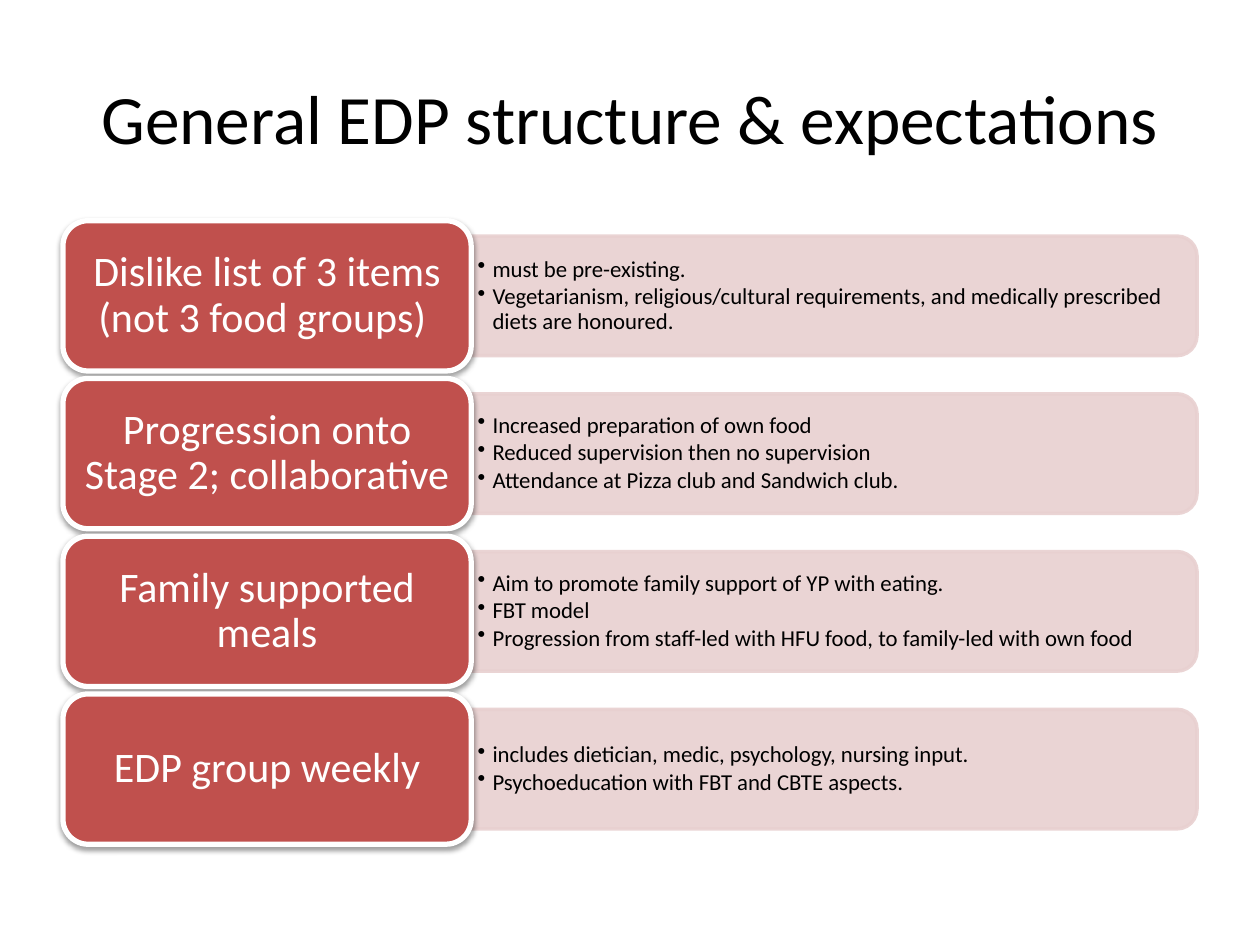
from dataclasses import dataclass

from lxml.etree import SubElement
from pptx import Presentation
from pptx.dml.color import RGBColor
from pptx.enum.shapes import MSO_SHAPE
from pptx.enum.text import MSO_ANCHOR, PP_ALIGN
from pptx.oxml.ns import qn
from pptx.util import Cm, Pt

COLOURS = {"black": "000000", "white": "FFFFFF", "red": "C0504D", "pink": "E8D0D0"}
FONT = "Calibri"

# Row geometry, in centimetres
TOP, PITCH = 4.45, 3.18
LABEL_LEFT, LABEL_WIDTH, LABEL_HEIGHT = 1.27, 8.23, 3.03
PANEL_LEFT, PANEL_WIDTH, PANEL_HEIGHT = LABEL_LEFT + LABEL_WIDTH, 14.63, 2.41
DETAIL_WIDTH, DETAIL_HEIGHT = 14.5, 2.18
BULLET_INDENT = 0.3


@dataclass
class Row:
    label: str
    details: list[str]


ROWS = [
    Row("Dislike list of 3 items (not 3 food groups) ", [
        "must be pre-existing.",
        "Vegetarianism, religious/cultural requirements, and medically prescribed "
        "diets are honoured.",
    ]),
    Row("Progression onto Stage 2; collaborative", [
        "Increased preparation of own food",
        "Reduced supervision then no supervision",
        "Attendance at Pizza club and Sandwich club.",
    ]),
    Row("Family supported meals", [
        "Aim to promote family support of YP with eating.",
        "FBT model",
        "Progression from staff-led with HFU food, to family-led with own food",
    ]),
    Row("EDP group weekly", [
        "includes dietician, medic, psychology, nursing input.",
        "Psychoeducation with FBT and CBTE aspects.",
    ]),
]


def colour(name: str) -> RGBColor:
    return RGBColor.from_string(COLOURS[name])


def write_text(shape, lines: list[str], *, size: float, color: str = "black",
               align=PP_ALIGN.LEFT, spacing: float = 1.0, after: float = 0,
               insets: tuple[float, float] = (0.25, 0.13), bullets: bool = False) -> None:
    """Fill a shape with one paragraph per line."""
    frame = shape.text_frame
    frame.word_wrap = True
    frame.vertical_anchor = MSO_ANCHOR.MIDDLE
    frame.margin_left = frame.margin_right = Cm(insets[0])
    frame.margin_top = frame.margin_bottom = Cm(insets[1])
    for index, line in enumerate(lines):
        paragraph = frame.paragraphs[0] if index == 0 else frame.add_paragraph()
        paragraph.alignment = align
        paragraph.line_spacing = spacing
        paragraph.space_after = Pt(after)
        run = paragraph.add_run()
        run.text = line
        run.font.name = FONT
        run.font.size = Pt(size)
        run.font.color.rgb = colour(color)
        if bullets:
            properties = paragraph._p.get_or_add_pPr()
            properties.set("marL", str(Cm(BULLET_INDENT)))
            properties.set("indent", str(-Cm(BULLET_INDENT)))
            SubElement(properties, qn("a:buChar"), char="•")


def add_box(slide, kind, left: float, top: float, width: float, height: float,
            *, fill: str, line: str, line_width: float):
    shape = slide.shapes.add_shape(kind, Cm(left), Cm(top), Cm(width), Cm(height))
    shape.shadow.inherit = False
    shape.fill.solid()
    shape.fill.fore_color.rgb = colour(fill)
    shape.line.color.rgb = colour(line)
    shape.line.width = Pt(line_width)
    return shape


def add_shadow(shape) -> None:
    """Drop a soft shadow straight down."""
    effects = shape._element.spPr.find(qn("a:effectLst"))
    shadow = SubElement(effects, qn("a:outerShdw"), blurRad=str(Pt(3.1)),
                        dist=str(Pt(1.6)), dir="5400000", rotWithShape="0")
    shade = SubElement(shadow, qn("a:srgbClr"), val=COLOURS["black"])
    SubElement(shade, qn("a:alpha"), val="38000")


def add_row(slide, row: Row, top: float) -> None:
    middle = top + LABEL_HEIGHT / 2

    # Panel: a shape with two rounded top corners, turned to face right
    panel = add_box(slide, MSO_SHAPE.ROUND_2_SAME_RECTANGLE,
                    PANEL_LEFT + (PANEL_WIDTH - PANEL_HEIGHT) / 2,
                    middle - PANEL_WIDTH / 2, PANEL_HEIGHT, PANEL_WIDTH,
                    fill="pink", line="pink", line_width=2)
    panel.rotation = 90
    for tint in panel._element.spPr.iter(qn("a:srgbClr")):
        SubElement(tint, qn("a:alpha"), val="90000")

    # Details, upright over the panel
    details = slide.shapes.add_textbox(Cm(PANEL_LEFT), Cm(middle - DETAIL_HEIGHT / 2),
                                       Cm(DETAIL_WIDTH), Cm(DETAIL_HEIGHT))
    write_text(details, row.details, size=13, spacing=0.9, after=1.7,
               insets=(0.13, 0.08), bullets=True)

    # Label
    label = add_box(slide, MSO_SHAPE.ROUNDED_RECTANGLE, LABEL_LEFT, top,
                    LABEL_WIDTH, LABEL_HEIGHT, fill="red", line="white", line_width=3)
    add_shadow(label)
    write_text(label, [row.label], size=24, color="white",
               align=PP_ALIGN.CENTER, spacing=0.9)


def main() -> None:
    presentation = Presentation()
    presentation.slide_width, presentation.slide_height = Cm(25.4), Cm(19.05)
    slide = presentation.slides.add_slide(presentation.slide_layouts[5])

    # Title
    title = slide.shapes.title
    title.left, title.top, title.width, title.height = Cm(1.27), Cm(0.76), Cm(22.86), Cm(3.18)
    write_text(title, ["General EDP structure & expectations"], size=39.6,
               align=PP_ALIGN.CENTER)

    # Rows
    for index, row in enumerate(ROWS):
        add_row(slide, row, TOP + index * PITCH)

    presentation.save("out.pptx")


if __name__ == "__main__":
    main()
